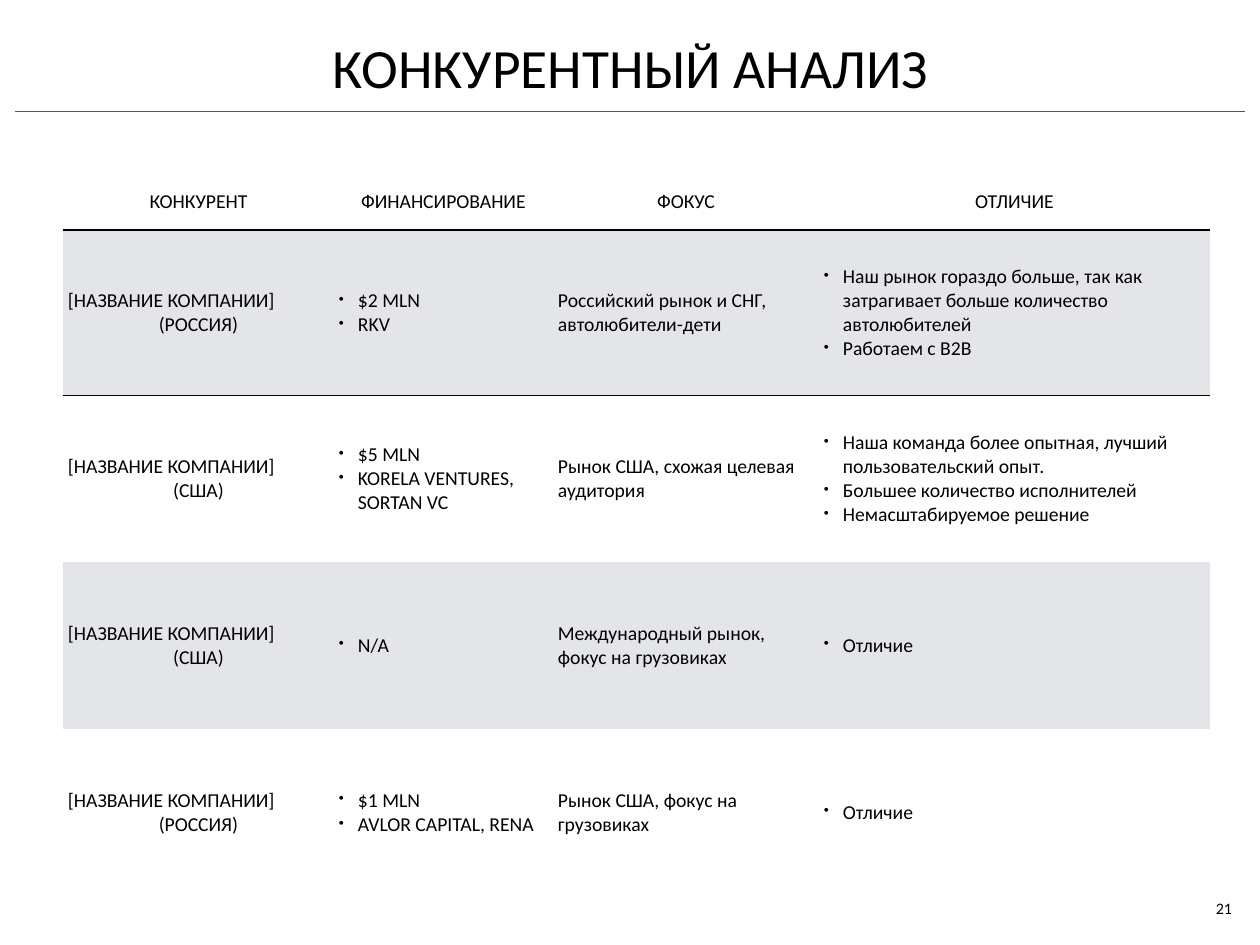
from lxml import etree
from pptx import Presentation
from pptx import util as u
from pptx.dml.color import RGBColor
from pptx.enum import shapes, text
from pptx.oxml import ns

PX = 10320  # EMU per px
BLACK = RGBColor(0, 0, 0)
WHITE = RGBColor(255, 255, 255)
GREY = RGBColor(0xE3, 0xE5, 0xE8)
SLATE = RGBColor(0x53, 0x58, 0x5F)
LEFT, MID = text.PP_ALIGN.LEFT, text.PP_ALIGN.CENTER

COLS = [271, 219, 266, 391]
ROWS = [56, 166, 166, 167, 167]
HEAD = ["КОНКУРЕНТ", "ФИНАНСИРОВАНИЕ", "ФОКУС", "ОТЛИЧИЕ"]
NAME = "[НАЗВАНИЕ КОМПАНИИ]"
RIVALS = [
    [[NAME, "(РОССИЯ)"], ["$2 MLN", "RKV"],
     ["Российский рынок и СНГ, автолюбители-дети"],
     ["Наш рынок гораздо больше, так как затрагивает больше количество автолюбителей",
      "Работаем с B2B"]],
    [[NAME, "(США)"], ["$5 MLN", "KORELA VENTURES, SORTAN VC"],
     ["Рынок США, схожая целевая аудитория"],
     ["Наша команда более опытная, лучший пользовательский опыт.",
      "Большее количество исполнителей", "Немасштабируемое решение"]],
    [[NAME, "(США)"], ["N/A"],
     ["Международный рынок, фокус на грузовиках"], ["Отличие"]],
    [[NAME, "(РОССИЯ)"], ["$1 MLN", "AVLOR CAPITAL, RENA"],
     ["Рынок США, фокус на грузовиках"], ["Отличие"]],
]


def write(para, words, size, align):
    para.text = words
    para.alignment = align
    para.font.name = "Calibri"
    para.font.size = u.Pt(size)
    para.font.color.rgb = BLACK


def add(parent, tag, **attrs):
    return etree.SubElement(parent, ns.qn(tag), **attrs)


deck = Presentation()
deck.slide_width, deck.slide_height = 1260 * PX, 945 * PX
slide = deck.slides.add_slide(deck.slide_layouts[6])

# Rule under the title
rule = slide.shapes.add_connector(
    shapes.MSO_CONNECTOR.STRAIGHT, 15 * PX, 111 * PX, 1245 * PX, 111 * PX)
rule.line.color.rgb = SLATE
rule.line.width = u.Pt(0.75)
add(rule.element.spPr, "a:effectLst")

# Title and page number
for words, size, box, wrap, anchor in [
    ("КОНКУРЕНТНЫЙ АНАЛИЗ", 45, (63, 13, 1135, 107), True, text.MSO_ANCHOR.MIDDLE),
    ("21", 13, (1211, 898, 26, 29), False, text.MSO_ANCHOR.TOP),
]:
    frame = slide.shapes.add_textbox(*[n * PX for n in box]).text_frame
    frame.margin_left = frame.margin_right = 0
    frame.margin_top = frame.margin_bottom = 0
    frame.word_wrap = wrap
    frame.vertical_anchor = anchor
    write(frame.paragraphs[0], words, size, MID)

# Table without a preset style
grid = slide.shapes.add_table(
    len(ROWS), len(COLS), 63 * PX, 174 * PX, sum(COLS) * PX, sum(ROWS) * PX).table
grid.first_row = grid.horz_banding = False
style = grid._tbl.tblPr.find(ns.qn("a:tableStyleId"))
style.text = "{2D5ABB26-0587-4C30-8999-92F81FD0307C}"
for col, width in zip(grid.columns, COLS):
    col.width = width * PX
for row, height in zip(grid.rows, ROWS):
    row.height = height * PX

# Cells
for r, line in enumerate([[[word] for word in HEAD]] + RIVALS):
    for c, items in enumerate(line):
        cell = grid.cell(r, c)
        cell.margin_left = cell.margin_right = 5 * PX
        cell.margin_top = cell.margin_bottom = 5 * PX
        cell.vertical_anchor = text.MSO_ANCHOR.MIDDLE
        props = cell._tc.get_or_add_tcPr()

        # Border between header and body
        if r < 2:
            edge = add(props, "a:lnT" if r else "a:lnB", w=str(u.Pt(1)))
            ink = add(edge, "a:solidFill")
            add(ink, "a:srgbClr", val=str(BLACK))
        cell.fill.solid()
        cell.fill.fore_color.rgb = GREY if r % 2 else WHITE

        # Header and second name line are centred, lists are bulleted
        for i, item in enumerate(items):
            frame = cell.text_frame
            para = frame.add_paragraph() if i else frame.paragraphs[0]
            centred = r == 0 or (c == 0 and i == 1)
            write(para, item, 16, MID if centred else LEFT)
            if r and c % 2:
                form = para._p.get_or_add_pPr()
                form.set("marL", str(19 * PX))
                form.set("indent", str(-19 * PX))
                size = etree.Element(ns.qn("a:buSzPct"), val="75000")
                mark = etree.Element(ns.qn("a:buChar"), char="•")
                form.insert(0, size)
                form.insert(1, mark)

deck.save("out.pptx")
